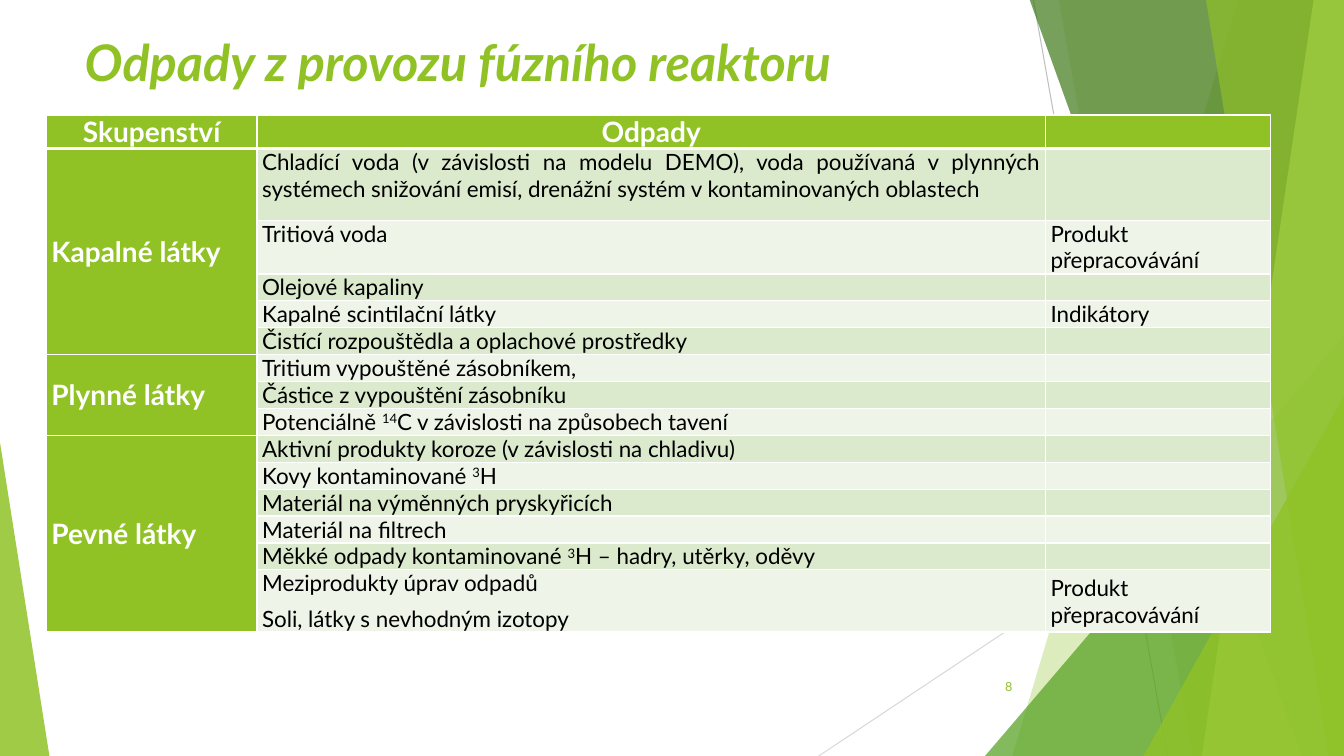
from dataclasses import dataclass

from lxml.etree import SubElement
from pptx import Presentation
from pptx.dml.color import RGBColor
from pptx.enum.shapes import MSO_CONNECTOR, MSO_SHAPE
from pptx.enum.text import MSO_ANCHOR as Anchor, PP_ALIGN as Align
from pptx.oxml.ns import qn
from pptx.util import Inches, Pt


@dataclass(frozen=True)
class Theme:
    font: str = "Lato"
    green: str = "90C226"
    mid_green: str = "54A021"
    dark_green: str = "3F7819"
    light_green: str = "C0E474"
    band_dark: str = "DBE9CD"
    band_light: str = "EEF4E8"
    white: str = "FFFFFF"
    black: str = "000000"
    line_dark: str = "BFBFBF"
    line_light: str = "D9D9D9"
    title_size: int = 36
    head_size: int = 20
    body_size: int = 16
    number_size: int = 9


THEME = Theme()
WIDTH, HEIGHT, TOP = 13.33, 7.5, -0.01

# Right-hand facets: top left x, bottom left x, colour, opacity in percent
BACK_FACETS = [(12.28, 10.04, THEME.green, 30), (10.5, 11.83, THEME.green, 20)]
FRONT_FACETS = [
    (10.21, 12.91, THEME.dark_green, 70),
    (13.03, 11.92, THEME.light_green, 70),
    (11.96, 13.18, THEME.green, 65),
]

# Table content; text between carets is superscript
HEADINGS = ["Skupenství", "Odpady", ""]
REPROCESSED = "Produkt přepracovávání"
GROUPS = [
    ("Kapalné látky", [
        ("Chladící voda (v závislosti na modelu DEMO), voda používaná v plynných "
         "systémech snižování emisí, drenážní systém v kontaminovaných oblastech", ""),
        ("Tritiová voda", REPROCESSED),
        ("Olejové kapaliny", ""),
        ("Kapalné scintilační látky", "Indikátory"),
        ("Čistící rozpouštědla a oplachové prostředky", ""),
    ]),
    ("Plynné látky", [
        ("Tritium vypouštěné zásobníkem,", ""),
        ("Částice z vypouštění zásobníku", ""),
        ("Potenciálně ^14^C v závislosti na způsobech tavení", ""),
    ]),
    ("Pevné látky", [
        ("Aktivní produkty koroze (v závislosti na chladivu)", ""),
        ("Kovy kontaminované ^3^H", ""),
        ("Materiál na výměnných pryskyřicích", ""),
        ("Materiál na filtrech", ""),
        ("Měkké odpady kontaminované ^3^H – hadry, utěrky, oděvy", ""),
        ("Meziprodukty úprav odpadů\nSoli, látky s nevhodným izotopy", REPROCESSED),
    ]),
]
COLUMN_WIDTHS = [2.09, 7.82, 2.23]
ROW_HEIGHTS = [0.33, 0.71, 0.53] + [0.26] * 11 + [0.61]


def rgb(colour):
    return RGBColor.from_string(colour)


def add_run(para, text, size, colour, bold=False, italic=False):
    run = para.add_run()
    run.text = text
    font = run.font
    font.name, font.size = THEME.font, Pt(size)
    font.bold, font.italic = bold, italic
    font.color.rgb = rgb(colour)
    return run


def paint(shape, colour, opacity):
    shape.shadow.inherit = False
    shape.line.fill.background()
    shape.fill.solid()
    shape.fill.fore_color.rgb = rgb(colour)
    colour_node = shape.fill._xPr.find(".//" + qn("a:srgbClr"))
    SubElement(colour_node, qn("a:alpha"), val=str(opacity * 1000))


def add_line(page, start, end, colour):
    line = page.shapes.add_connector(
        MSO_CONNECTOR.STRAIGHT, *(Inches(value) for value in start + end))
    line.line.color.rgb = rgb(colour)
    line.line.width = Pt(0.75)
    SubElement(line._element.spPr, qn("a:effectLst"))


def add_facet(page, top_x, bottom_x, colour, opacity):
    corners = [(WIDTH, TOP), (WIDTH, HEIGHT), (bottom_x, HEIGHT)]
    builder = page.shapes.build_freeform(Inches(top_x), Inches(TOP), scale=1.0)
    builder.add_line_segments([(Inches(x), Inches(y)) for x, y in corners], close=True)
    paint(builder.convert_to_shape(), colour, opacity)


def add_triangle(page, left, top, width, apex, colour, opacity):
    triangle = page.shapes.add_shape(
        MSO_SHAPE.ISOSCELES_TRIANGLE,
        Inches(left), Inches(top), Inches(width), Inches(HEIGHT - top))
    triangle.adjustments[0] = apex
    paint(triangle, colour, opacity)


def add_backdrop(page):
    add_line(page, (10.25, 0), (11.58, HEIGHT), THEME.line_dark)
    add_line(page, (WIDTH, 4.03), (8.12, HEIGHT), THEME.line_light)
    for facet in BACK_FACETS:
        add_facet(page, *facet)
    add_triangle(page, 9.77, 3.33, 3.56, 1, THEME.mid_green, 72)
    for facet in FRONT_FACETS:
        add_facet(page, *facet)
    add_triangle(page, 11.34, 3.93, 1.99, 1, THEME.green, 80)
    add_triangle(page, 0, 4.39, 0.49, 0, THEME.green, 85)


def set_title(page, text):
    title = page.shapes.title
    title.left, title.top = Inches(0.74), Inches(0.26)
    title.width, title.height = Inches(9.4), Inches(0.7)
    title.text_frame.vertical_anchor = Anchor.MIDDLE
    para = title.text_frame.paragraphs[0]
    para.alignment = Align.LEFT
    add_run(para, text, THEME.title_size, THEME.green, bold=True, italic=True)


def add_page_number(page, text):
    box = page.shapes.add_textbox(Inches(9.39), Inches(6.61), Inches(0.75), Inches(0.4))
    box.text_frame.word_wrap = True
    box.text_frame.vertical_anchor = Anchor.MIDDLE
    para = box.text_frame.paragraphs[0]
    para.alignment = Align.RIGHT
    add_run(para, text, THEME.number_size, THEME.green)


def style_cell(cell, fill, bottom_width=1):
    cell.margin_left = cell.margin_right = Inches(0.05)
    cell.margin_top = cell.margin_bottom = 0
    properties = cell._tc.get_or_add_tcPr()
    for side, width in (("L", 1), ("R", 1), ("T", 1), ("B", bottom_width)):
        border = SubElement(properties, qn("a:ln" + side), w=str(Pt(width)))
        solid = SubElement(border, qn("a:solidFill"))
        SubElement(solid, qn("a:srgbClr"), val=THEME.white)
    cell.fill.solid()
    cell.fill.fore_color.rgb = rgb(fill)


def fill_cell(cell, text, size, colour, bold=False, align=Align.JUSTIFY, anchor=Anchor.TOP):
    cell.vertical_anchor = anchor
    frame = cell.text_frame
    for index, line in enumerate(text.split("\n")):
        para = frame.add_paragraph() if index else frame.paragraphs[0]
        para.alignment = align
        para.space_after = Pt(6)
        for part, piece in enumerate(line.split("^")):
            if piece:
                run = add_run(para, piece, size, colour, bold)
                if part % 2:
                    run.font._element.set("baseline", "30000")
        # Keeps empty cells as low as the filled ones
        SubElement(para._p, qn("a:endParaRPr"), sz=str(size * 100))


def add_waste_table(page):
    frame = page.shapes.add_table(
        len(ROW_HEIGHTS), len(COLUMN_WIDTHS), Inches(0.46), Inches(1.14),
        Inches(sum(COLUMN_WIDTHS)), Inches(sum(ROW_HEIGHTS)))
    table = frame.table
    for column, width in zip(table.columns, COLUMN_WIDTHS):
        column.width = Inches(width)
    for row, height in zip(table.rows, ROW_HEIGHTS):
        row.height = Inches(height)

    # Heading row
    for column, heading in enumerate(HEADINGS):
        cell = table.cell(0, column)
        style_cell(cell, THEME.green, bottom_width=3)
        fill_cell(cell, heading, THEME.head_size, THEME.white, True, Align.CENTER)

    # One merged label per state of matter, then its wastes
    row = 1
    for label, wastes in GROUPS:
        first, last = row, row + len(wastes) - 1
        for waste, note in wastes:
            band = THEME.band_dark if row % 2 else THEME.band_light
            style_cell(table.cell(row, 0), THEME.green)
            for column, text in ((1, waste), (2, note)):
                middle = column == 2 and row == len(ROW_HEIGHTS) - 1
                style_cell(table.cell(row, column), band)
                fill_cell(table.cell(row, column), text, THEME.body_size, THEME.black,
                          anchor=Anchor.MIDDLE if middle else Anchor.TOP)
            row += 1
        table.cell(first, 0).merge(table.cell(last, 0))
        fill_cell(table.cell(first, 0), label, THEME.head_size, THEME.white, True,
                  anchor=Anchor.MIDDLE)


def main():
    deck = Presentation()
    deck.slide_width, deck.slide_height = Inches(WIDTH), Inches(HEIGHT)
    page = deck.slides.add_slide(deck.slide_layouts[5])
    add_backdrop(page)
    set_title(page, "Odpady z provozu fúzního reaktoru")
    add_page_number(page, "8")
    add_waste_table(page)
    deck.save("out.pptx")


if __name__ == "__main__":
    main()
